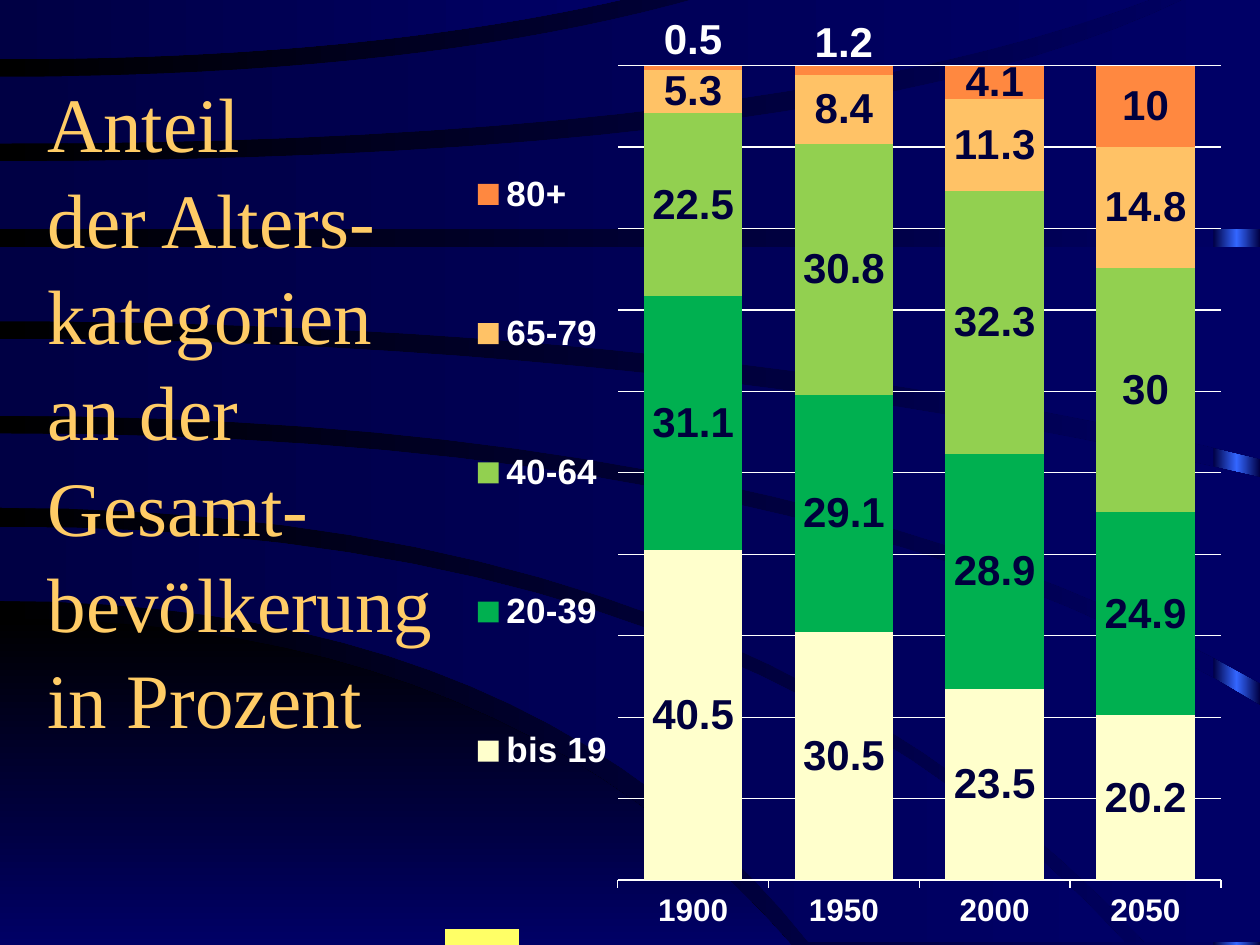
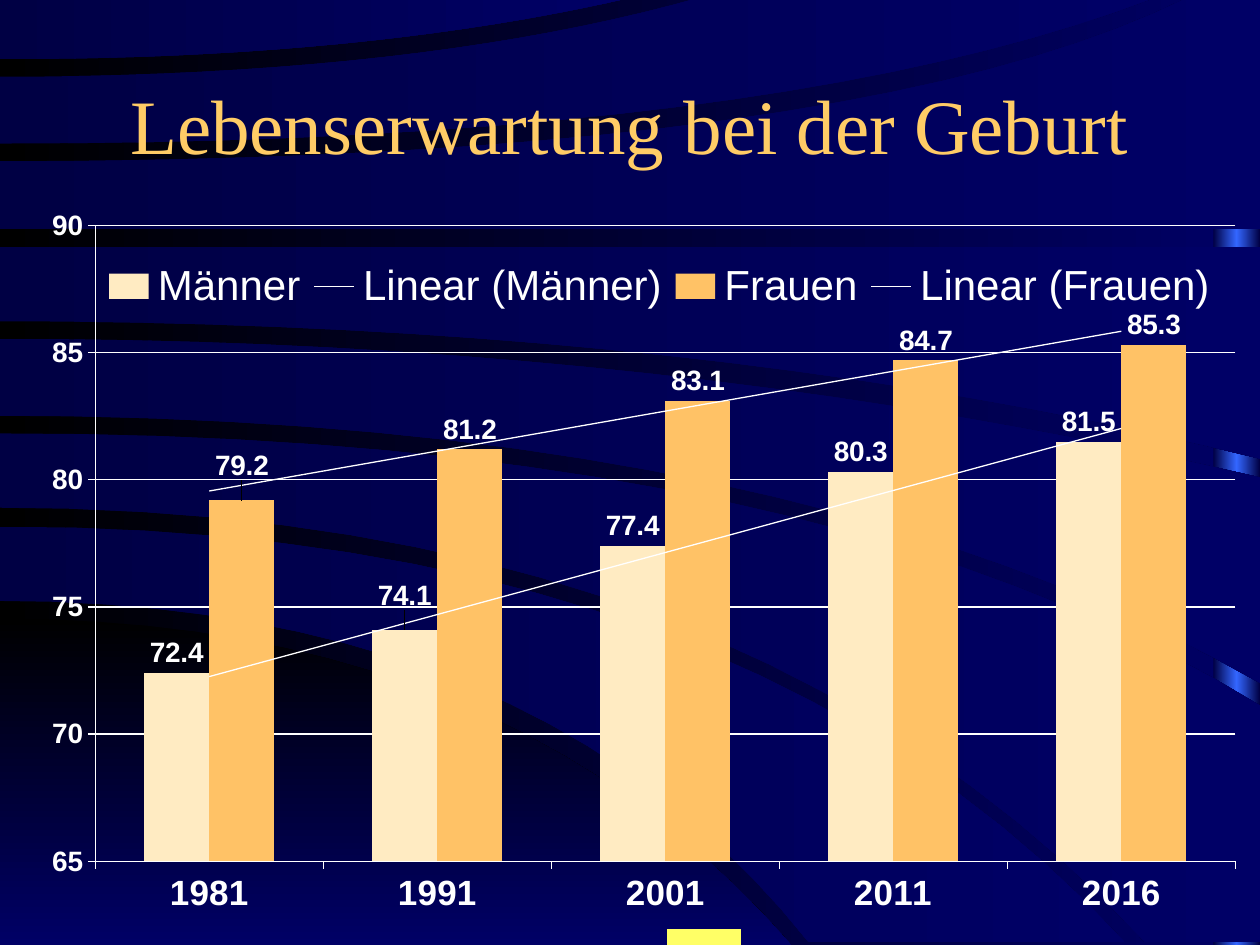
import copy

import pptx
import pptx.chart.data
import pptx.dml.color
import pptx.enum.chart
import pptx.enum.shapes
import pptx.enum.text
import pptx.oxml
import pptx.oxml.ns
import pptx.util
from lxml import etree

Inches, Pt, qn = pptx.util.Inches, pptx.util.Pt, pptx.oxml.ns.qn
RGB = pptx.dml.color.RGBColor.from_string
XL = pptx.enum.chart

C = {
    "black": "000000", "blue": "000066", "navy": "000044", "glow": "3366FF",
    "title": "FFCC66", "white": "FFFFFF", "label": "00003D", "marker": "FFFF66",
    "cream": "FFFFCC", "green": "00B050", "lime": "92D050", "amber": "FFC266",
    "orange": "FF8840", "sand": "FFEBC2",
}

# Upper and lower edge of each band: start y, bend x, end x, end y.
BANDS = [
    ((4.91, 4.03, 6.28, 7.5), (7.5, 3, 6.28, 7.5)),
    ((4.18, 5.9, 8.93, 7.48), (4.77, 4.27, 6.42, 7.48)),
    ((3.44, 6.5, 10, 5.6), (4.03, 5.9, 9.09, 7.48)),
    ((2.69, 5.3, 10, 3.79), (3.3, 6.3, 10, 5.42)),
    ((1.96, 5, 10, 1.96), (2.55, 5.6, 10, 3.64)),
    ((1.28, 6.8, 9.43, -0.02), (1.82, 5, 10, 1.82)),
    ((0.61, 3.34, 5.56, -0.02), (1.14, 6.15, 9.17, -0.02)),
    ((-0.02, 2.5, 5.01, -0.02), (0.47, 2.9, 5.01, -0.02)),
]
STEPS = 20

SLIDES = [
    {"title": "Anteil\vder Alters-kategorien\van der Gesamt-bevölkerung\vin Prozent",
     "title_at": (0.28, 0.52, 3.39, 5.91), "anchor": "TOP", "align": "LEFT", "spacing": 1.04,
     "type": "COLUMN_STACKED_100", "chart_at": (3.58, 0.13, 6.3, 7.37),
     "cats": ["1900", "1950", "2000", "2050"], "gap": 53, "overlap": 100,
     "series": [("bis 19", [40.5, 30.5, 23.5, 20.2], "cream"),
                ("20-39", [31.1, 29.1, 28.9, 24.9], "green"),
                ("40-64", [22.5, 30.8, 32.3, 30], "lime"),
                ("65-79", [5.3, 8.4, 11.3, 14.8], "amber"),
                ("80+", [0.5, 1.2, 4.1, 10], "orange")],
     "cat_size": 18, "label_size": 24, "label_color": "label", "label_pos": "CENTER",
     "raised": [(4, 0, -0.03), (4, 1, -0.03)],
     "plot": (0.21, 0.05, 0.76, 0.88), "legend": (0.03, 0.06, 0.17, 0.86),
     "legend_pos": "LEFT", "legend_size": 20, "legend_bold": True,
     "scale": None, "trend": False, "marker": 6},
    {"title": "Lebenserwartung bei der Geburt",
     "title_at": (0.75, 0.36, 8.5, 1.25), "anchor": "MIDDLE", "align": "CENTER", "spacing": 1,
     "type": "COLUMN_CLUSTERED", "chart_at": (0.28, 1.62, 9.53, 5.67),
     "cats": ["1981", "1991", "2001", "2011", "2016"], "gap": 150, "overlap": 0,
     "series": [("Männer", [72.4, 74.1, 77.4, 80.3, 81.5], "sand"),
                ("Frauen", [79.2, 81.2, 83.1, 84.7, 85.3], "amber")],
     "cat_size": 20, "label_size": 16, "label_color": "white", "label_pos": "OUTSIDE_END",
     "raised": [(0, 1, -0.02), (1, 0, -0.02)],
     "plot": (0.05, 0.03, 0.95, 0.89), "legend": (0.05, 0.08, 0.94, 0.07),
     "legend_pos": "RIGHT", "legend_size": 24, "legend_bold": False,
     "scale": (65, 90, 5), "trend": True, "marker": 9},
]


def set_gradient(fill, start, end, angle=0):
    fill.gradient()
    fill.gradient_angle = angle
    for stop, name in zip(fill.gradient_stops, (start, end)):
        stop.color.rgb = RGB(C[name])


def set_layout(parent, index, values):
    for old in parent.findall(qn("c:layout")):
        parent.remove(old)
    layout = etree.Element(qn("c:layout"))
    manual = etree.SubElement(layout, qn("c:manualLayout"))
    for tag, val in values:
        etree.SubElement(manual, qn("c:" + tag), val=str(val))
    parent.insert(index, layout)


prs = pptx.Presentation()
prs.slide_width, prs.slide_height = Inches(10), Inches(7.5)
master = prs.slide_master
set_gradient(master.background.fill, "black", "blue")
slides = [prs.slides.add_slide(prs.slide_layouts[6]) for _ in SLIDES]

shapes = slides[0].shapes
stripe = shapes.add_shape(pptx.enum.shapes.MSO_SHAPE.RECTANGLE,
                          Inches(9.63), 0, Inches(0.37), Inches(7.5))
set_gradient(stripe.fill, "navy", "navy")
stops = stripe.element.xpath(".//a:gsLst")[0]
middle = copy.deepcopy(stops[0])
middle.set("pos", "50000")
middle[0].set("val", C["glow"])
stops.insert(1, middle)
backdrop = [stripe]
for band in BANDS:
    upper, lower = [
        [(2 * t * (1 - t) * bend + t * t * x, (1 - t * t) * start + t * t * y)
         for t in (i / STEPS for i in range(STEPS + 1))]
        for start, bend, x, y in band]
    right = max(upper[-1][0], lower[-1][0])
    corners = [(right, upper[-1][1]), (right, lower[-1][1])]
    points = [(Inches(x), Inches(y)) for x, y in upper + corners + lower[::-1]]
    builder = shapes.build_freeform(*points[0])
    builder.add_line_segments(points[1:], close=True)
    sp = builder.convert_to_shape()
    if band is BANDS[0]:
        set_gradient(sp.fill, "black", "blue", 270)
    else:
        set_gradient(sp.fill, "navy", "blue")
    backdrop.append(sp)
tree = master.element.xpath("./p:cSld/p:spTree")[0]
for i, sp in enumerate(backdrop):
    sp.shadow.inherit = False
    sp.line.fill.background()
    sp.element.xpath(".//p:cNvPr")[0].set("id", str(100 + i))
    tree.insert(2 + i, sp.element)

for s, d in zip(slides, SLIDES):
    tf = s.shapes.add_textbox(*map(Inches, d["title_at"])).text_frame
    tf.word_wrap = True
    tf.vertical_anchor = getattr(pptx.enum.text.MSO_ANCHOR, d["anchor"])
    p = tf.paragraphs[0]
    p.text = d["title"]
    p.alignment = getattr(pptx.enum.text.PP_ALIGN, d["align"])
    p.line_spacing = d["spacing"]
    for r in p.runs:
        r.font.size, r.font.name = Pt(44), "Times New Roman"
        r.font.color.rgb = RGB(C["title"])

    data = pptx.chart.data.CategoryChartData()
    data.categories = d["cats"]
    for name, vals, _ in d["series"]:
        data.add_series(name, vals)
    chart = s.shapes.add_chart(getattr(XL.XL_CHART_TYPE, d["type"]),
                               *map(Inches, d["chart_at"]), data).chart
    chart.has_title = False
    chart.font.name, chart.font.size = "Arial", Pt(11)
    chart.font.color.rgb = RGB(C["white"])
    plot = chart.plots[0]
    plot.vary_by_categories = False
    plot.gap_width, plot.overlap = d["gap"], d["overlap"]

    cat, val = chart.category_axis, chart.value_axis
    cat.has_major_gridlines = False
    val.has_major_gridlines = True
    for axis, size in ((cat, d["cat_size"]), (val, 16)):
        axis.major_tick_mark = XL.XL_TICK_MARK.OUTSIDE
        axis.tick_labels.font.size, axis.tick_labels.font.bold = Pt(size), True
    for line in (cat.format.line, val.format.line, val.major_gridlines.format.line):
        line.color.rgb, line.width = RGB(C["white"]), Pt(0.75)
    if d["scale"]:
        val.minimum_scale, val.maximum_scale, val.major_unit = d["scale"]
    else:
        val.major_unit = 0.1
        val.visible = False

    for ser, (_, _, color) in zip(plot.series, d["series"]):
        ser.format.fill.solid()
        ser.format.fill.fore_color.rgb = RGB(C[color])
        labels = ser.data_labels
        labels.show_value = True
        labels.position = getattr(XL.XL_LABEL_POSITION, d["label_pos"])
        labels.font.size, labels.font.bold = Pt(d["label_size"]), True
        labels.font.color.rgb = RGB(C[d["label_color"]])
    for row, col, dy in d["raised"]:
        label = plot.series[row].points[col].data_label
        label.font.size, label.font.bold = Pt(d["label_size"]), True
        label.font.color.rgb = RGB(C["white"])
        label.position = getattr(XL.XL_LABEL_POSITION, d["label_pos"])
        dlbl = chart.element.xpath(f".//c:ser[{row + 1}]//c:dLbl[c:idx/@val='{col}']")[0]
        set_layout(dlbl, 1, [("x", 0), ("y", dy)])
    if d["trend"]:
        for cats in chart.element.xpath(".//c:ser/c:cat"):
            cats.addprevious(pptx.oxml.parse_xml(
                '<c:trendline xmlns:c="http://schemas.openxmlformats.org/drawingml/2006/chart"'
                ' xmlns:a="http://schemas.openxmlformats.org/drawingml/2006/main">'
                '<c:spPr><a:ln w="9525"><a:solidFill><a:srgbClr val="%s"/></a:solidFill></a:ln>'
                '</c:spPr><c:trendlineType val="linear"/><c:dispRSqr val="0"/>'
                '<c:dispEq val="0"/></c:trendline>' % C["white"]))

    chart.has_legend = True
    chart.legend.position = getattr(XL.XL_LEGEND_POSITION, d["legend_pos"])
    chart.legend.include_in_layout = False
    font = chart.legend.font
    font.size, font.bold = Pt(d["legend_size"]), d["legend_bold"]
    font.color.rgb = RGB(C["white"])
    edges = [("xMode", "edge"), ("yMode", "edge")]
    set_layout(chart.element.xpath(".//c:plotArea")[0], 0,
               [("layoutTarget", "inner")] + edges + list(zip("xywh", d["plot"])))
    set_layout(chart.element.xpath(".//c:legend")[0], 1, edges + list(zip("xywh", d["legend"])))

    frame = s.shapes.add_table(1, 17, 0, Inches(7.37), Inches(10), Inches(0.16))
    table = frame.table
    table.first_row = table.horz_banding = False
    frame.element.xpath(".//a:tableStyleId")[0].text = "{2D5ABB26-0587-4C30-8999-92F81FD0307C}"
    for i, cell in enumerate(table.iter_cells()):
        cell.margin_left = cell.margin_right = cell.margin_top = cell.margin_bottom = 0
        if i == d["marker"]:
            cell.fill.solid()
            cell.fill.fore_color.rgb = RGB(C["marker"])
        else:
            cell.fill.background()
    for par in frame.element.iter(qn("a:p")):
        etree.SubElement(par, qn("a:endParaRPr"), sz="800")

prs.save("out.pptx")
